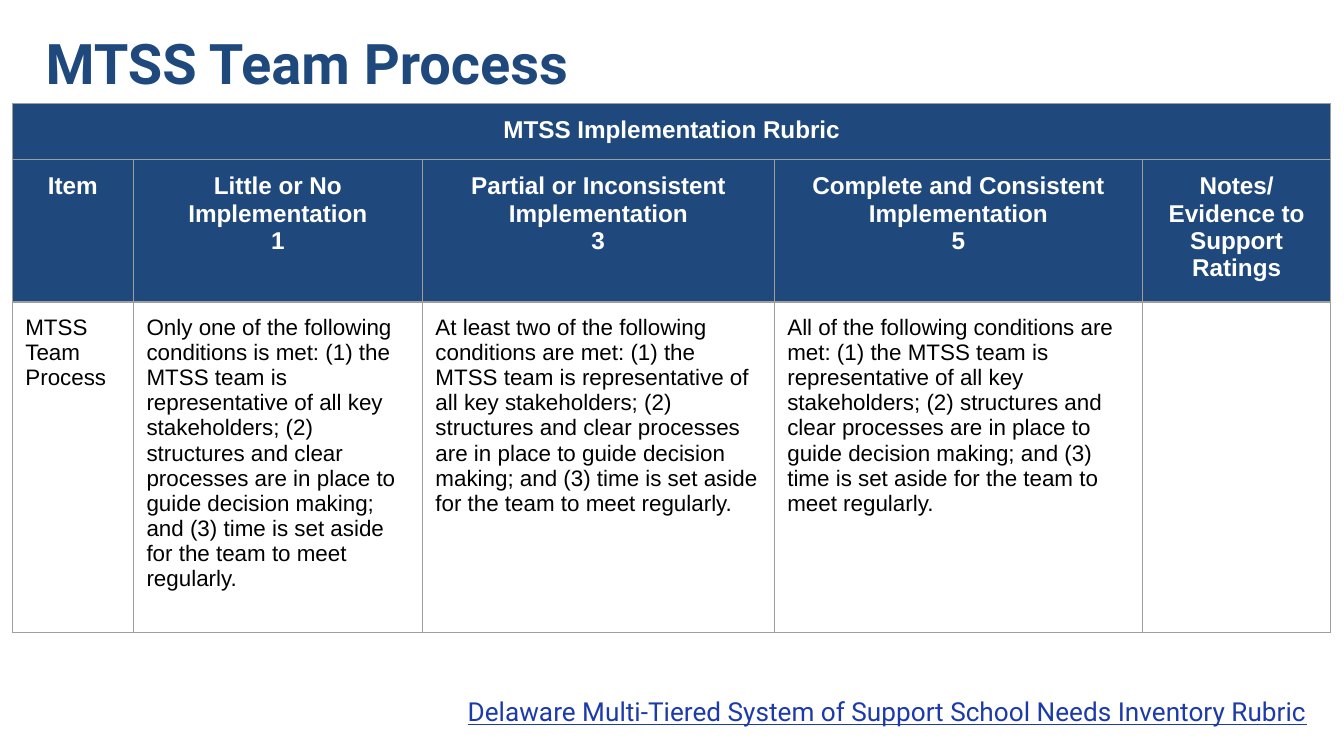
from lxml import etree
from pptx import Presentation
from pptx.dml.color import RGBColor
from pptx.enum import text as t
from pptx.oxml import ns
from pptx.util import Cm, Pt

COLORS = {"navy": "1F497D", "white": "FFFFFF", "black": "000000",
          "link": "1C3AA9", "border": "9E9E9E"}
INSET = Cm(0.25)
RUBRIC_LEFT, RUBRIC_TOP = 0.23, 1.96
BANNER_HEIGHT = 1.06
COLUMN_WIDTHS = [2.29, 5.46, 6.65, 6.96, 3.56]
ROW_HEIGHTS = [2.69, 6.25]

HEADINGS = ["Item", "Little or No Implementation\n1",
            "Partial or Inconsistent Implementation\n3",
            "Complete and Consistent Implementation\n5",
            "Notes/\nEvidence to Support Ratings"]
CONDITIONS = ("met: (1) the MTSS team is representative of all key stakeholders; "
              "(2) structures and clear processes are in place to guide decision making; "
              "and (3) time is set aside for the team to meet regularly.")
RATINGS = ["MTSS Team Process",
           f"Only one of the following conditions is {CONDITIONS}",
           f"At least two of the following conditions are {CONDITIONS}",
           f"All of the following conditions are {CONDITIONS}",
           ""]
HEADER_FORMAT = dict(size=13, color="white", bold=True, align=t.PP_ALIGN.CENTER)


def write(frame, wording, size, color, font="Arial", bold=False,
          underline=False, align=t.PP_ALIGN.LEFT):
    """Fill a text frame, one paragraph for each line of the wording."""
    for index, line in enumerate(wording.split("\n")):
        paragraph = frame.paragraphs[0] if index == 0 else frame.add_paragraph()
        paragraph.alignment = align
        run = paragraph.add_run()
        run.text = line
        run.font.name, run.font.size = font, Pt(size)
        run.font.bold, run.font.underline = bold, underline
        run.font.color.rgb = RGBColor.from_string(COLORS[color])


def set_frame(frame):
    frame.word_wrap = True
    frame.auto_size = t.MSO_AUTO_SIZE.NONE
    frame.vertical_anchor = t.MSO_ANCHOR.TOP
    frame.margin_left = frame.margin_right = INSET
    frame.margin_top = frame.margin_bottom = INSET


def add_borders(cell):
    properties = cell._tc.get_or_add_tcPr()
    for position, side in enumerate(("lnL", "lnR", "lnT", "lnB")):
        line = etree.Element(ns.qn(f"a:{side}"), w=str(Pt(0.75)))
        fill = etree.SubElement(line, ns.qn("a:solidFill"))
        etree.SubElement(fill, ns.qn("a:srgbClr"), val=COLORS["border"])
        properties.insert(position, line)


def style_cell(cell, wording, fill=None, **style):
    cell.margin_left = cell.margin_right = INSET
    cell.margin_top = cell.margin_bottom = INSET
    if fill:
        cell.fill.solid()
        cell.fill.fore_color.rgb = RGBColor.from_string(COLORS[fill])
    else:
        cell.fill.background()
    add_borders(cell)
    if wording:
        write(cell.text_frame, wording, **style)


def add_grid(slide, left, top, widths, heights):
    grid = slide.shapes.add_table(len(heights), len(widths), Cm(left), Cm(top),
                                  Cm(sum(widths)), Cm(sum(heights))).table
    grid.first_row = grid.horz_banding = False
    for column, width in zip(grid.columns, widths):
        column.width = Cm(width)
    for row, height in zip(grid.rows, heights):
        row.height = Cm(height)
    return grid


def place_title(slide, left, top, width, height):
    title = slide.shapes.title
    title.left, title.top = Cm(left), Cm(top)
    title.width, title.height = Cm(width), Cm(height)
    set_frame(title.text_frame)
    write(title.text_frame, "MTSS Team Process", size=30, color="navy",
          font="Roboto", bold=True)


def add_rubric(slide, left, top):
    ratings = add_grid(slide, left, top + BANNER_HEIGHT, COLUMN_WIDTHS, ROW_HEIGHTS)
    for column, (heading, rating) in enumerate(zip(HEADINGS, RATINGS)):
        style_cell(ratings.cell(0, column), heading, fill="navy", **HEADER_FORMAT)
        style_cell(ratings.cell(1, column), rating, size=12, color="black")
    banner = add_grid(slide, left, top, [sum(COLUMN_WIDTHS)], [BANNER_HEIGHT])
    style_cell(banner.cell(0, 0), "MTSS Implementation Rubric", fill="navy",
               **HEADER_FORMAT)


def add_source(slide, left, top, width, height):
    source = slide.shapes.add_textbox(Cm(left), Cm(top), Cm(width), Cm(height))
    set_frame(source.text_frame)
    write(source.text_frame,
          "Delaware Multi-Tiered System of Support School Needs Inventory Rubric",
          size=14, color="link", font="Roboto", underline=True)


def main():
    deck = Presentation()
    deck.slide_width, deck.slide_height = Cm(25.4), Cm(14.29)
    slide = deck.slides.add_slide(deck.slide_layouts[5])
    add_source(slide, 8.59, 12.9, 16.56, 1.12)
    place_title(slide, 0.61, 0.28, 13.16, 1.8)
    add_rubric(slide, RUBRIC_LEFT, RUBRIC_TOP)
    deck.save("out.pptx")


if __name__ == "__main__":
    main()
